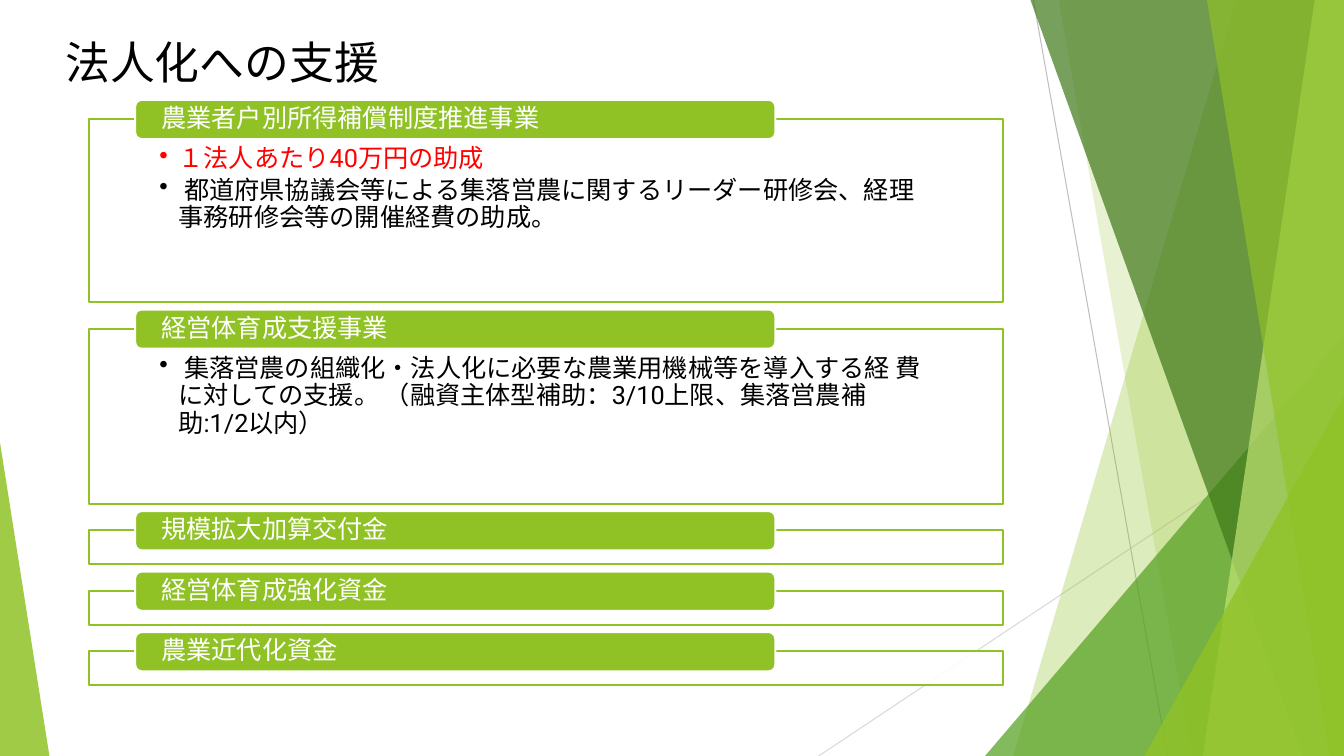
import pptx
import pptx.util
import pptx.dml.color
import pptx.enum.shapes
import pptx.enum.text
import pptx.oxml.ns
import lxml.etree

Inches = pptx.util.Inches
Pt = pptx.util.Pt
RGBColor = pptx.dml.color.RGBColor
MSO_SHAPE = pptx.enum.shapes.MSO_SHAPE
MSO_ANCHOR = pptx.enum.text.MSO_ANCHOR
PP_ALIGN = pptx.enum.text.PP_ALIGN
qn = pptx.oxml.ns.qn

GREEN = RGBColor(0x90, 0xC2, 0x26)
MID_GREEN = RGBColor(0x54, 0xA0, 0x21)
DARK_GREEN = RGBColor(0x3F, 0x78, 0x19)
PALE_GREEN = RGBColor(0xC0, 0xE4, 0x74)
LIGHT_GREY = RGBColor(0xD9, 0xD9, 0xD9)
GREY = RGBColor(0xBF, 0xBF, 0xBF)
WHITE = RGBColor(0xFF, 0xFF, 0xFF)
BLACK = RGBColor(0, 0, 0)
RED = RGBColor(0xFF, 0, 0)
LATIN_FONT = "Roboto"
JAPANESE_FONT = "Noto Sans CJK JP"

TITLE = "法人化への支援"
SECTIONS = [
    ("農業者戸別所得補償制度推進事業", 1.82, [
        ("１法人あたり40万円の助成", RED),
        (" 都道府県協議会等による集落営農に関するリーダー研修会、経理事務研修会等の開催経費の助成。", BLACK),
    ]),
    ("経営体育成支援事業", 1.74, [
        (" 集落営農の組織化・法人化に必要な農業用機械等を導入する経 費に対しての支援。 "
         "（融資主体型補助：3/10上限、集落営農補助:1/2以内）", BLACK),
    ]),
    ("規模拡大加算交付金", 0.34, []),
    ("経営体育成強化資金", 0.34, []),
    ("農業近代化資金", 0.34, []),
]
LINES = [((8.12, 7.5), (13.33, 4.03), LIGHT_GREY), ((10.25, 0), (11.58, 7.5), GREY)]
FACETS = [
    ([(12.26, 0), (10.05, 7.5), (13.33, 7.5), (13.33, 0)], GREEN, 30),
    ([(10.5, 0), (11.82, 7.5), (13.33, 7.5), (13.33, 0)], GREEN, 20),
    ([(9.77, 7.5), (13.33, 3.33), (13.33, 7.5)], MID_GREEN, 72),
    ([(10.22, 0), (12.92, 7.5), (13.33, 7.5), (13.33, 0)], DARK_GREEN, 70),
    ([(13.04, 0), (11.93, 7.5), (13.33, 7.5), (13.33, 0)], PALE_GREEN, 70),
    ([(11.97, 0), (13.19, 7.5), (13.33, 7.5), (13.33, 0)], GREEN, 65),
    ([(11.35, 7.5), (13.33, 3.93), (13.33, 7.5)], GREEN, 80),
    ([(0, 4.39), (0.49, 7.5), (0, 7.5)], GREEN, 85),
]
FIRST_TOP, SECTION_GAP = 1.18, 0.26
BOX_LEFT, BOX_WIDTH = 0.88, 9.07
TAB_LEFT, TAB_WIDTH, TAB_HEIGHT, TAB_RISE = 1.34, 6.35, 0.39, 0.19


def paint(shape, fill, alpha=100, line=None):
    shape.shadow.inherit = False
    shape.fill.solid()
    shape.fill.fore_color.rgb = fill
    if alpha < 100:
        color = shape.fill._xPr.find(qn("a:solidFill"))[0]
        lxml.etree.SubElement(color, qn("a:alpha"), val=str(alpha * 1000))
    if line is None:
        shape.line.fill.background()
    else:
        shape.line.color.rgb = line
        shape.line.width = Pt(1.5)


def frame_text(shape, anchor, left, top, right, bottom):
    frame = shape.text_frame
    values = {
        "word_wrap": True, "vertical_anchor": anchor,
        "margin_left": Inches(left), "margin_top": Inches(top),
        "margin_right": Inches(right), "margin_bottom": Inches(bottom),
    }
    for name, value in values.items():
        setattr(frame, name, value)
    return frame


def write(paragraph, text, size, color, spacing=0.9):
    paragraph.alignment = PP_ALIGN.LEFT
    paragraph.line_spacing = spacing
    run = paragraph.add_run()
    run.text = text
    for name, value in {"size": Pt(size), "name": LATIN_FONT}.items():
        setattr(run.font, name, value)
    run.font.color.rgb = color
    east_asian = lxml.etree.Element(qn("a:ea"), typeface=JAPANESE_FONT)
    run.font._element.find(qn("a:latin")).addnext(east_asian)


def add_bullet(paragraph):
    paragraph.space_after = Pt(3)
    properties = paragraph._p.get_or_add_pPr()
    properties.set("marL", str(Inches(0.19)))
    properties.set("indent", str(-Inches(0.19)))
    lxml.etree.SubElement(properties, qn("a:buChar"), char="•")


def add_background(shapes):
    for start, end, color in LINES:
        line = shapes.add_connector(
            pptx.enum.shapes.MSO_CONNECTOR.STRAIGHT, *map(Inches, start + end))
        line.line.color.rgb = color
        line.line.width = Pt(0.75)
        lxml.etree.SubElement(line._element.spPr, qn("a:effectLst"))
    for points, color, alpha in FACETS:
        corners = [(Inches(x), Inches(y)) for x, y in points]
        builder = shapes.build_freeform(*corners[0])
        builder.add_line_segments(corners[1:], close=True)
        paint(builder.convert_to_shape(), color, alpha)


def add_section(shapes, top, heading, height, items):
    box = shapes.add_shape(MSO_SHAPE.RECTANGLE, Inches(BOX_LEFT), Inches(top),
                           Inches(BOX_WIDTH), Inches(height))
    paint(box, WHITE, 90, GREEN)
    if items:
        frame = frame_text(box, MSO_ANCHOR.TOP, 0.7, 0.27, 0.7, 0.14)
        for index, (text, color) in enumerate(items):
            paragraph = frame.add_paragraph() if index else frame.paragraphs[0]
            write(paragraph, text, 18, color)
            add_bullet(paragraph)
    tab = shapes.add_shape(MSO_SHAPE.ROUNDED_RECTANGLE, Inches(TAB_LEFT),
                           Inches(top - TAB_RISE), Inches(TAB_WIDTH), Inches(TAB_HEIGHT))
    paint(tab, GREEN, line=WHITE)
    frame = frame_text(tab, MSO_ANCHOR.MIDDLE, 0.24, 0, 0.24, 0)
    write(frame.paragraphs[0], heading, 18, WHITE)


def main():
    presentation = pptx.Presentation()
    presentation.slide_width = Inches(13.33)
    presentation.slide_height = Inches(7.5)
    slide = presentation.slides.add_slide(presentation.slide_layouts[6])
    add_background(slide.shapes)
    title = slide.shapes.add_textbox(Inches(0.55), Inches(0.25), Inches(9.4), Inches(0.72))
    frame = frame_text(title, MSO_ANCHOR.MIDDLE, 0.1, 0.05, 0.1, 0.05)
    write(frame.paragraphs[0], TITLE, 32, BLACK, 1.0)
    top = FIRST_TOP
    for heading, height, items in SECTIONS:
        add_section(slide.shapes, top, heading, height, items)
        top += height + SECTION_GAP
    presentation.save("out.pptx")


if __name__ == "__main__":
    main()
